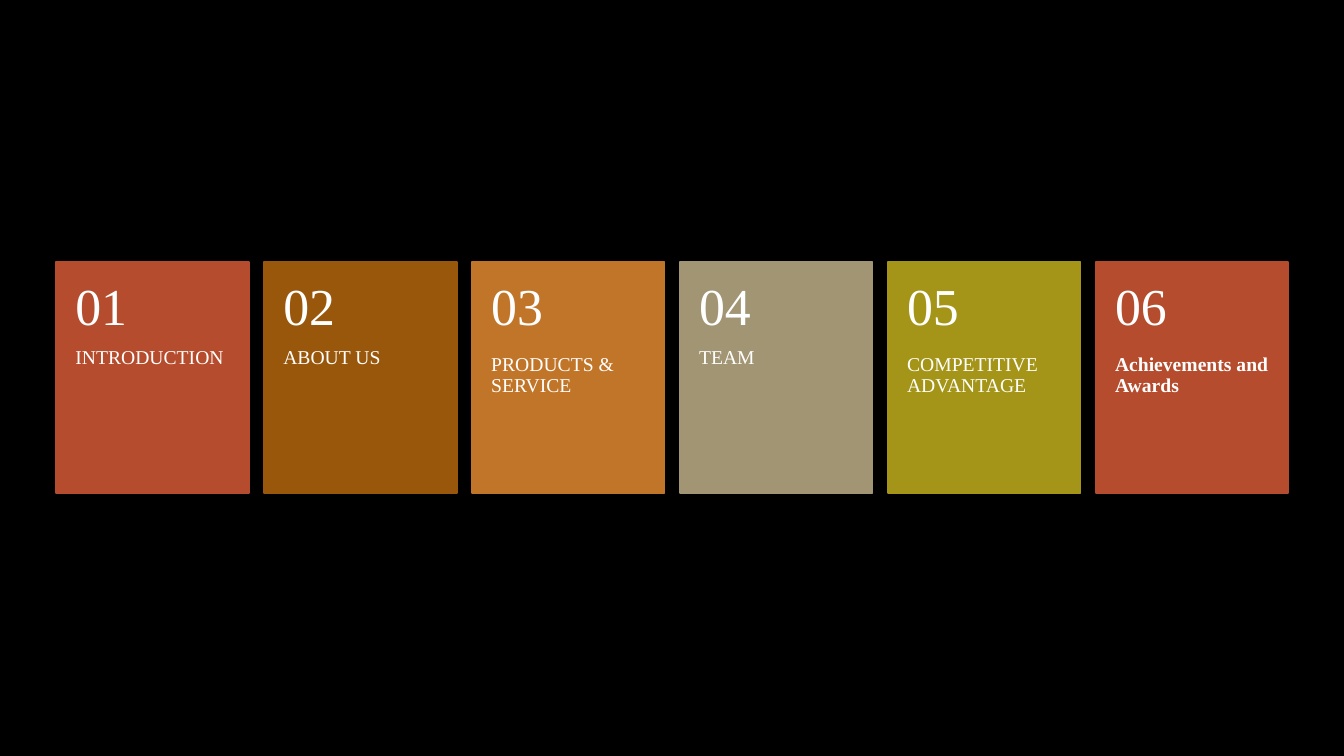
"""Build an agenda slide with six numbered cards."""
from pptx import Presentation
from pptx.dml.color import RGBColor
from pptx.enum.shapes import MSO_SHAPE
from pptx.enum.text import MSO_ANCHOR, PP_ALIGN
from pptx.util import Cm, Pt

RECT = MSO_SHAPE.RECTANGLE
TOP, MIDDLE = MSO_ANCHOR.TOP, MSO_ANCHOR.MIDDLE
LEFT = PP_ALIGN.LEFT

COLORS = {
    "black": "000000",
    "white": "FFFFFF",
    "rust": "B54C2D",
    "brown": "99570C",
    "orange": "C17529",
    "stone": "A19574",
    "olive": "A49518",
}
FONT = "Times New Roman"
CARDS = [
    ("INTRODUCTION", "rust", False),
    ("ABOUT US", "brown", False),
    ("PRODUCTS & SERVICE", "orange", False),
    ("TEAM", "stone", False),
    ("COMPETITIVE ADVANTAGE", "olive", False),
    ("Achievements and Awards", "rust", True),
]
CARD_LEFT, CARD_TOP, CARD_PITCH = 1.42, 6.6, 5.24
CARD_W, CARD_H, NUMBER_H = 4.85, 5.82, 2.34
SIDE = Cm(0.48)

NUMBER_FRAME = {"vertical_anchor": MIDDLE, "margin_top": Cm(0.46), "margin_bottom": Cm(0.46)}
TITLE_FRAME = {"vertical_anchor": TOP, "margin_top": 0, "margin_bottom": Cm(0.91)}


def rgb(name):
    return RGBColor.from_string(COLORS[name])


def set_attrs(obj, values):
    for key, value in values.items():
        setattr(obj, key, value)


def add_panel(shapes, left, color):
    sp = shapes.add_shape(RECT, Cm(left), Cm(CARD_TOP), Cm(CARD_W), Cm(CARD_H))
    sp.shadow.inherit = False
    sp.fill.solid()
    sp.fill.fore_color.rgb = rgb(color)
    sp.line.color.rgb = rgb(color)
    sp.line.width = Pt(1.25)


def add_text(shapes, text, left, top, height, frame, size, bold=False):
    sp = shapes.add_textbox(Cm(left), Cm(top), Cm(CARD_W), Cm(height))
    tf = sp.text_frame
    set_attrs(tf, {"word_wrap": True, "margin_left": SIDE, "margin_right": SIDE, **frame})
    p = tf.paragraphs[0]
    set_attrs(p, {"alignment": LEFT, "line_spacing": 0.9, "space_after": Pt(size * 0.35)})
    r = p.add_run()
    r.text = text
    set_attrs(r.font, {"name": FONT, "size": Pt(size), "bold": bold})
    r.font.color.rgb = rgb("white")


def add_card(shapes, index, title, color, bold):
    left = CARD_LEFT + index * CARD_PITCH
    add_panel(shapes, left, color)
    add_text(shapes, title, left, CARD_TOP + NUMBER_H, CARD_H - NUMBER_H, TITLE_FRAME, 14, bold)
    add_text(shapes, f"{index + 1:02}", left, CARD_TOP, NUMBER_H, NUMBER_FRAME, 37)


def main():
    prs = Presentation()
    set_attrs(prs, {"slide_width": Cm(33.87), "slide_height": Cm(19.05)})
    s = prs.slides.add_slide(prs.slide_layouts[6])
    s.background.fill.solid()
    s.background.fill.fore_color.rgb = rgb("black")
    agenda = s.shapes.add_group_shape()
    for index, card in enumerate(CARDS):
        add_card(agenda.shapes, index, *card)
    prs.save("out.pptx")


if __name__ == "__main__":
    main()
